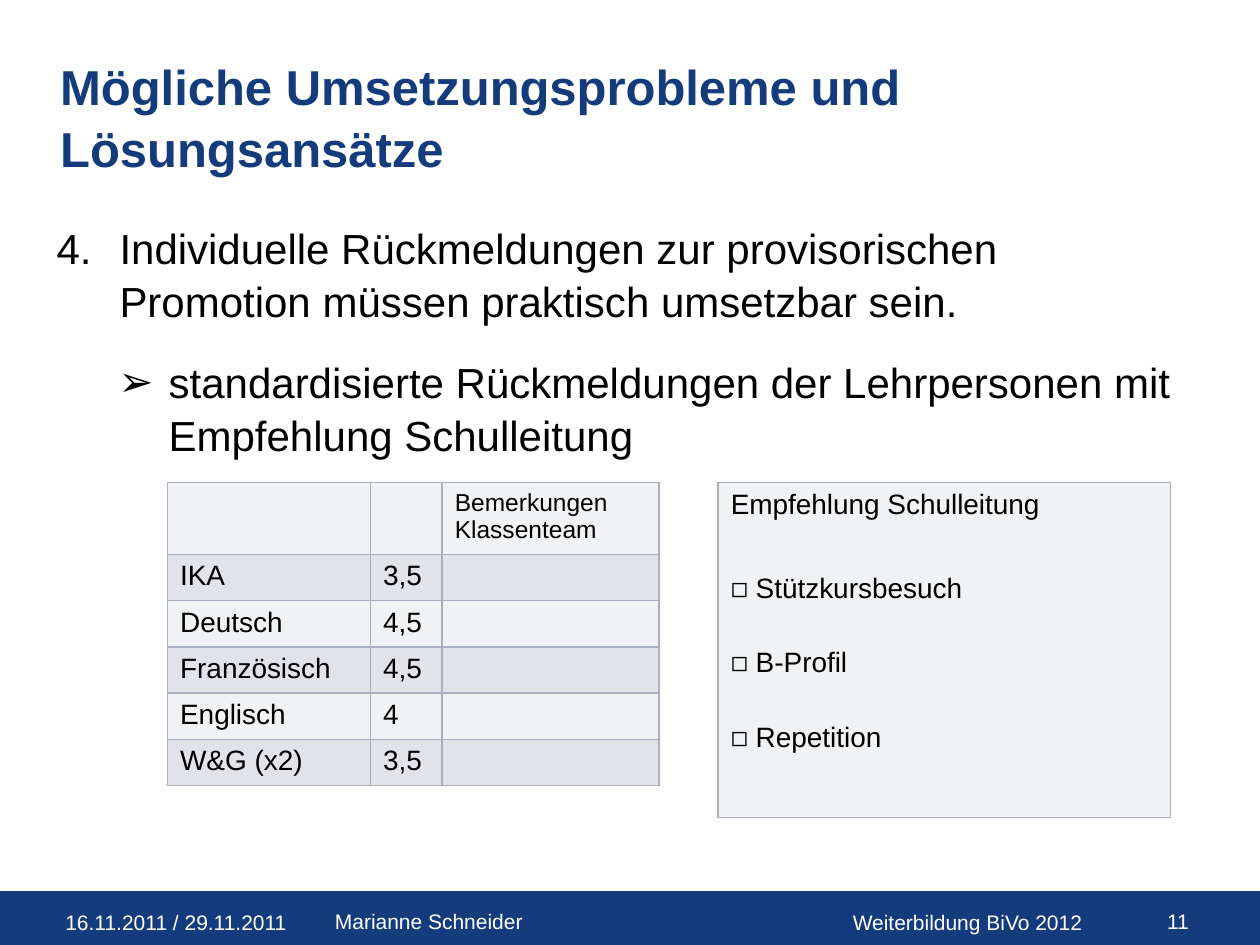
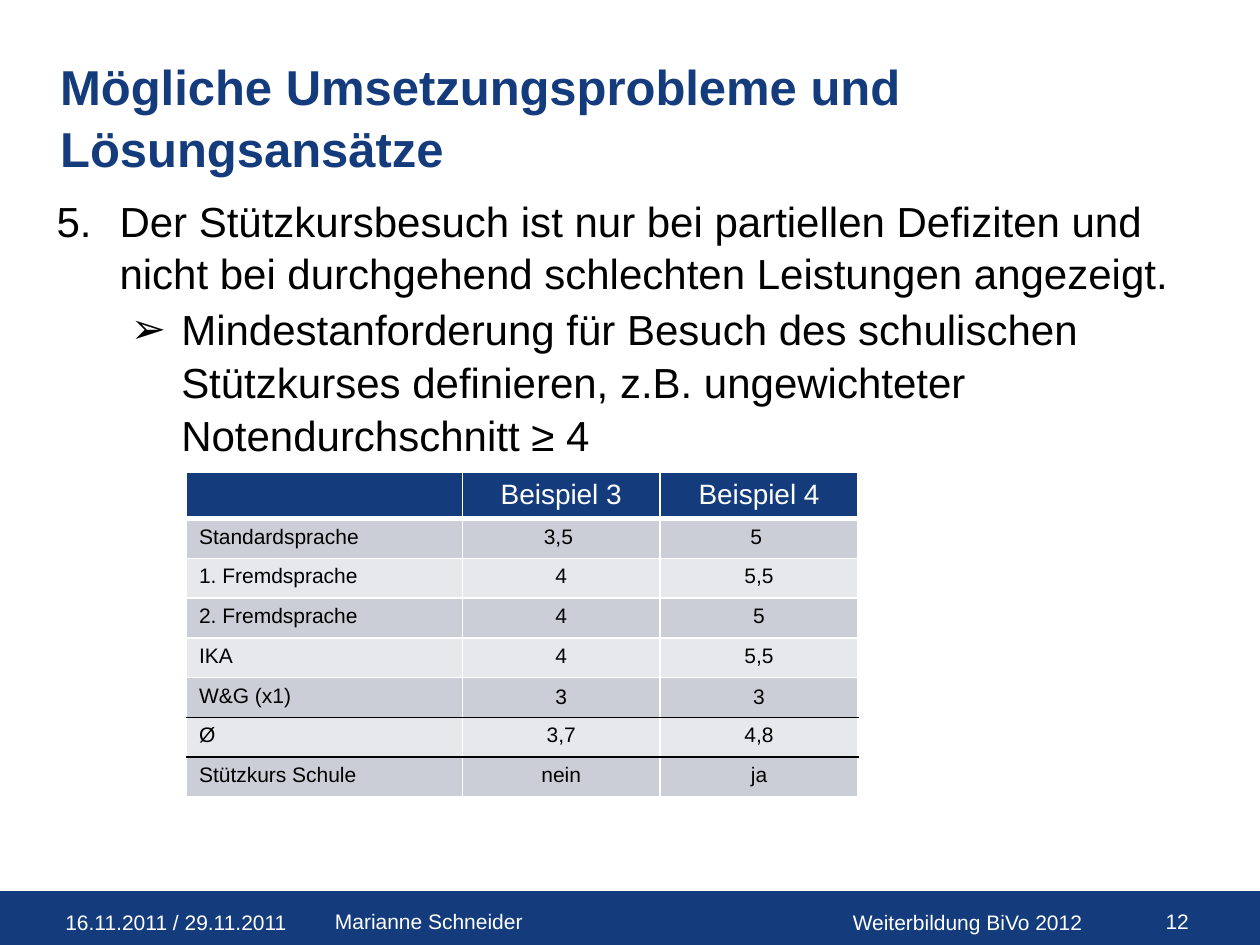
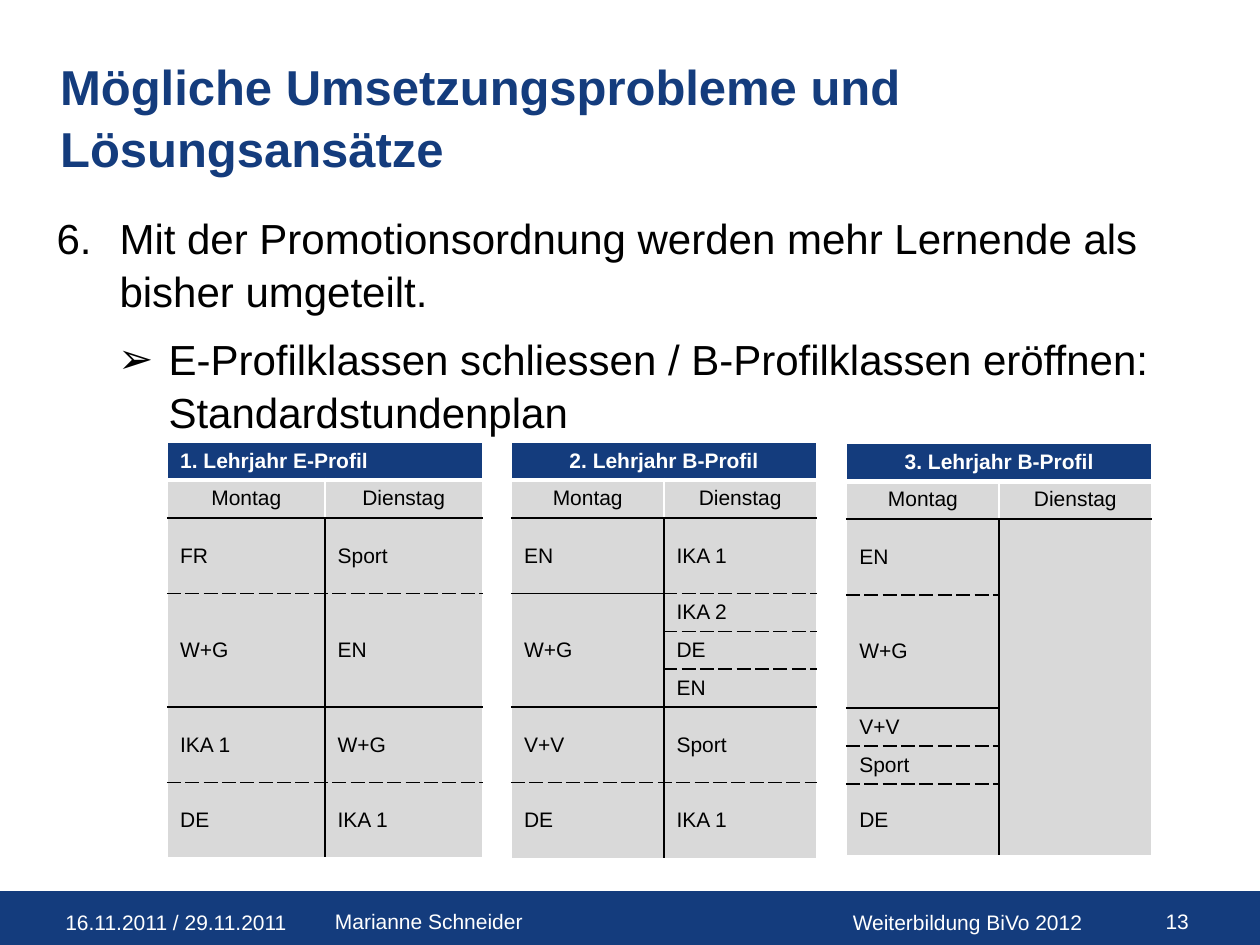
from lxml import etree
from pptx import Presentation
from pptx.dml.color import RGBColor
from pptx.enum.shapes import MSO_SHAPE
from pptx.enum.text import MSO_ANCHOR, PP_ALIGN
from pptx.oxml.ns import qn
from pptx.util import Inches, Pt

RECT = MSO_SHAPE.RECTANGLE
LEFT, CENTER, RIGHT = PP_ALIGN.LEFT, PP_ALIGN.CENTER, PP_ALIGN.RIGHT
TOP, MIDDLE = MSO_ANCHOR.TOP, MSO_ANCHOR.MIDDLE

NAVY, WHITE, BLACK = "143C7D", "FFFFFF", "000000"
PALE, PALE_ALT, OUTLINE = "F1F2F4", "E2E3E8", "AAAFBF"
BAND_DARK, BAND_LIGHT, LESSON_GREY = "CCCED7", "E7E8EC", "D9D9D9"
FONT, BOX_FONT = "Arial", "Karla"

TITLE = "Mögliche Umsetzungsprobleme und Lösungsansätze"
FIRST_PAGE = 11
FOOTERS = [
    (0.42, 7.17, 1.98, "16.11.2011 / 29.11.2011"),
    (2.56, 7.16, 3.78, "Marianne Schneider"),
    (6.67, 7.17, 2.33, "Weiterbildung BiVo 2012"),
]

# Border lines as (colour, width, dash)
WHITE_LINE, WHITE_THICK = (WHITE, 1, "solid"), (WHITE, 3, "solid")
SOLID, DASHED = (BLACK, 1, "solid"), (BLACK, 1, "sysDash")
GREY_LINE = (OUTLINE, 1, "solid")


def rgb(value):
    return RGBColor.from_string(value)


def add_run(p, text, size, color=BLACK, bold=False, font=FONT):
    r = p.add_run()
    r.text = text
    style = {"name": font, "size": Pt(size), "bold": bold}
    for name, value in style.items():
        setattr(r.font, name, value)
    r.font.color.rgb = rgb(color)


def add_text(s, left, top, width, height, text, size, color=BLACK,
             bold=False, align=LEFT, spacing=1.0):
    box = s.shapes.add_textbox(Inches(left), Inches(top), Inches(width), Inches(height))
    tf = box.text_frame
    tf.word_wrap = True
    p = tf.paragraphs[0]
    p.alignment = align
    p.line_spacing = spacing
    add_run(p, text, size, color, bold)
    return p


def hang(p, indent, tag, **attrs):
    """Give a paragraph a hanging indent and a bullet element."""
    pPr = p._p.get_or_add_pPr()
    pPr.set("marL", str(Inches(indent)))
    pPr.set("indent", str(-Inches(indent)))
    etree.SubElement(pPr, qn("a:buFont"), typeface=FONT)
    etree.SubElement(pPr, qn(tag), **attrs)


def add_point(s, top, number, text):
    p = add_text(s, 0.35, top, 9.11, 0.94, text, 24, spacing=1.05)
    hang(p, 0.5, "a:buAutoNum", type="arabicPeriod", startAt=str(number))


def add_measure(s, left, top, width, height, text):
    p = add_text(s, left, top, width, height, text, 24, spacing=1.05)
    hang(p, 0.4, "a:buChar", char="➢")


def add_base_slide(prs, page):
    """Add a slide with the shared title, footer band and page number."""
    s = prs.slides.add_slide(prs.slide_layouts[6])
    band = s.shapes.add_shape(RECT, Inches(-0.04), Inches(7.08), Inches(10.04), Inches(0.42))
    band.shadow.inherit = False
    band.fill.solid()
    band.fill.fore_color.rgb = rgb(NAVY)
    band.line.color.rgb = rgb(NAVY)
    band.line.width = Pt(0.75)
    for left, top, width, text in FOOTERS:
        add_text(s, left, top, width, 0.32, text, 12, WHITE)
    add_text(s, 9, 7.16, 0.58, 0.34, f"{page} ", 12, WHITE, align=RIGHT)
    add_text(s, 0.38, 0.38, 7.3, 0.93, TITLE, 28, NAVY, bold=True, spacing=1.05)
    return s


def add_grid(s, left, top, widths, heights):
    frame = s.shapes.add_table(len(heights), len(widths), Inches(left), Inches(top),
                               Inches(sum(widths)), Inches(sum(heights)))
    tbl = frame.table
    tbl.first_row = tbl.horz_banding = False
    for col, width in zip(tbl.columns, widths):
        col.width = Inches(width)
    for row, height in zip(tbl.rows, heights):
        row.height = Inches(height)
    return tbl


def style_cell(cell, fill, borders, anchor=TOP):
    """Set fill, anchor and borders; borders are left, right, top, bottom."""
    tcPr = cell._tc.get_or_add_tcPr()
    for side, (color, width, dash) in zip("LRTB", borders):
        ln = etree.SubElement(tcPr, qn(f"a:ln{side}"), w=str(Pt(width)))
        paint = etree.SubElement(ln, qn("a:solidFill"))
        etree.SubElement(paint, qn("a:srgbClr"), val=color)
        etree.SubElement(ln, qn("a:prstDash"), val=dash)
    cell.fill.solid()
    cell.fill.fore_color.rgb = rgb(fill)
    cell.vertical_anchor = anchor


def write_cell(cell, text, size, color=BLACK, bold=False, align=LEFT):
    p = cell.text_frame.paragraphs[0]
    p.alignment = align
    if text:
        add_run(p, text, size, color, bold)
    else:
        etree.SubElement(p._p, qn("a:endParaRPr"), sz=str(size * 100))


def add_feedback_table(s):
    rows = [
        ("", "", "Bemerkungen Klassenteam"),
        ("IKA", "3,5", ""),
        ("Deutsch", "4,5", ""),
        ("Französisch", "4,5", ""),
        ("Englisch", "4", ""),
        ("W&G (x2)", "3,5", ""),
    ]
    tbl = add_grid(s, 1.33, 3.83, [1.61, 0.57, 1.72], [0.57] + [1.83 / 5] * 5)
    for i, row in enumerate(rows):
        for j, text in enumerate(row):
            cell = tbl.cell(i, j)
            style_cell(cell, PALE_ALT if i % 2 else PALE, [GREY_LINE] * 4)
            write_cell(cell, text, 16 if i else 14)


def add_recommendation(s):
    cell = add_grid(s, 5.7, 3.83, [3.59], [2.66]).cell(0, 0)
    style_cell(cell, PALE, [GREY_LINE] * 4)
    write_cell(cell, "Empfehlung Schulleitung", 16)
    for i, option in enumerate(["Stützkursbesuch", "B-Profil", "Repetition"]):
        p = cell.text_frame.add_paragraph()
        p.space_before = Pt(24 if i else 30)
        add_run(p, "◻", 16, font=BOX_FONT)
        add_run(p, f" {option}", 16)


def add_examples_table(s):
    rows = [
        ("", "Beispiel 3", "Beispiel 4"),
        ("Standardsprache", "3,5 ", "5 "),
        ("1. Fremdsprache", "4", "5,5"),
        ("2. Fremdsprache", "4", "5"),
        ("IKA", "4", "5,5"),
        ("W&G (x1)", "3", "3"),
        ("Ø", "3,7", "4,8"),
        ("Stützkurs Schule", "nein", "ja"),
    ]
    lines_below = {0: WHITE_THICK, 5: SOLID, 6: SOLID}
    tbl = add_grid(s, 1.48, 3.75, [2.19, 1.57, 1.57], [0.36] + [2.21 / 7] * 7)
    for i, row in enumerate(rows):
        above, below = (lines_below.get(k, WHITE_LINE) for k in (i - 1, i))
        fill = NAVY if i == 0 else BAND_DARK if i % 2 else BAND_LIGHT
        for j, text in enumerate(row):
            cell = tbl.cell(i, j)
            anchor = MIDDLE if i == 5 and j else TOP
            style_cell(cell, fill, [WHITE_LINE, WHITE_LINE, above, below], anchor)
            write_cell(cell, text, 12 if i else 16, BLACK if i else WHITE,
                       align=CENTER if j else LEFT)


def add_timetable(s, left, top, col_width, heights, title, days, title_align=CENTER):
    """Draw two days of lessons, each lesson being (name, rows, line below)."""
    tbl = add_grid(s, left, top, [col_width] * 2, [0.3, 0.3] + heights)
    head = tbl.cell(0, 0)
    head.merge(tbl.cell(0, 1))
    style_cell(head, NAVY, [WHITE_LINE] * 3 + [WHITE_THICK], MIDDLE)
    write_cell(head, title, 12, WHITE, True, title_align)
    for j, (day, lessons) in enumerate(zip(("Montag", "Dienstag"), days)):
        cell = tbl.cell(1, j)
        style_cell(cell, LESSON_GREY, [WHITE_LINE, WHITE_LINE, WHITE_THICK, SOLID])
        write_cell(cell, day, 12, align=CENTER)
        sides = [SOLID, WHITE_LINE] if j else [WHITE_LINE, SOLID]
        row, above = 2, SOLID
        for name, span, below in lessons:
            cell = tbl.cell(row, j)
            if span > 1:
                cell.merge(tbl.cell(row + span - 1, j))
            style_cell(cell, LESSON_GREY, sides + [above, below], MIDDLE)
            for k in range(span):
                write_cell(tbl.cell(row + k, j), "" if k else name, 12)
            row, above = row + span, below


def add_timetables(s):
    add_timetable(s, 1.33, 3.51, 1.25, [0.6, 0.9, 0.6, 0.6], "1. Lehrjahr E-Profil", [
        [("FR", 1, DASHED), ("W+G", 1, SOLID), ("IKA 1", 1, DASHED), ("DE", 1, WHITE_LINE)],
        [("Sport", 1, DASHED), ("EN", 1, SOLID), ("W+G", 1, DASHED), ("IKA 1", 1, WHITE_LINE)],
    ], LEFT)
    add_timetable(s, 4.06, 3.51, 1.21, [0.6, 0.3, 0.3, 0.3, 0.6, 0.6], "2. Lehrjahr B-Profil", [
        [("EN", 1, SOLID), ("W+G", 3, SOLID), ("V+V", 1, DASHED), ("DE", 1, WHITE_LINE)],
        [("IKA 1", 1, DASHED), ("IKA 2", 1, DASHED), ("DE", 1, DASHED), ("EN", 1, SOLID),
         ("Sport", 1, DASHED), ("IKA 1", 1, WHITE_LINE)],
    ])
    add_timetable(s, 6.72, 3.52, 1.21, [0.6, 0.9, 0.3, 0.3, 0.57], "3. Lehrjahr B-Profil", [
        [("EN", 1, DASHED), ("W+G", 1, SOLID), ("V+V", 1, DASHED), ("Sport", 1, DASHED),
         ("DE", 1, WHITE_LINE)],
        [("", 5, WHITE_LINE)],
    ])


def main():
    prs = Presentation()
    prs.slide_width, prs.slide_height = Inches(10), Inches(7.5)
    feedback, support, schedule = (add_base_slide(prs, FIRST_PAGE + i) for i in range(3))

    add_point(feedback, 1.7, 4, "Individuelle Rückmeldungen zur provisorischen "
              "Promotion müssen praktisch umsetzbar sein.")
    add_measure(feedback, 0.84, 2.76, 8.69, 0.91, "standardisierte Rückmeldungen der "
                "Lehrpersonen mit Empfehlung Schulleitung")
    add_feedback_table(feedback)
    add_recommendation(feedback)

    add_point(support, 1.48, 5, "Der Stützkursbesuch ist nur bei partiellen Defiziten und "
              "nicht bei durchgehend schlechten Leistungen angezeigt.")
    add_measure(support, 0.94, 2.34, 7.79, 1.72, "Mindestanforderung für Besuch des "
                "schulischen Stützkurses definieren, z.B. ungewichteter "
                "Notendurchschnitt ≥ 4")
    add_examples_table(support)

    add_point(schedule, 1.62, 6, "Mit der Promotionsordnung werden mehr Lernende als "
              "bisher umgeteilt.")
    add_measure(schedule, 0.84, 2.58, 8.46, 0.91, "E-Profilklassen schliessen / "
                "B-Profilklassen eröffnen: Standardstundenplan")
    add_timetables(schedule)

    prs.save("out.pptx")


if __name__ == "__main__":
    main()
